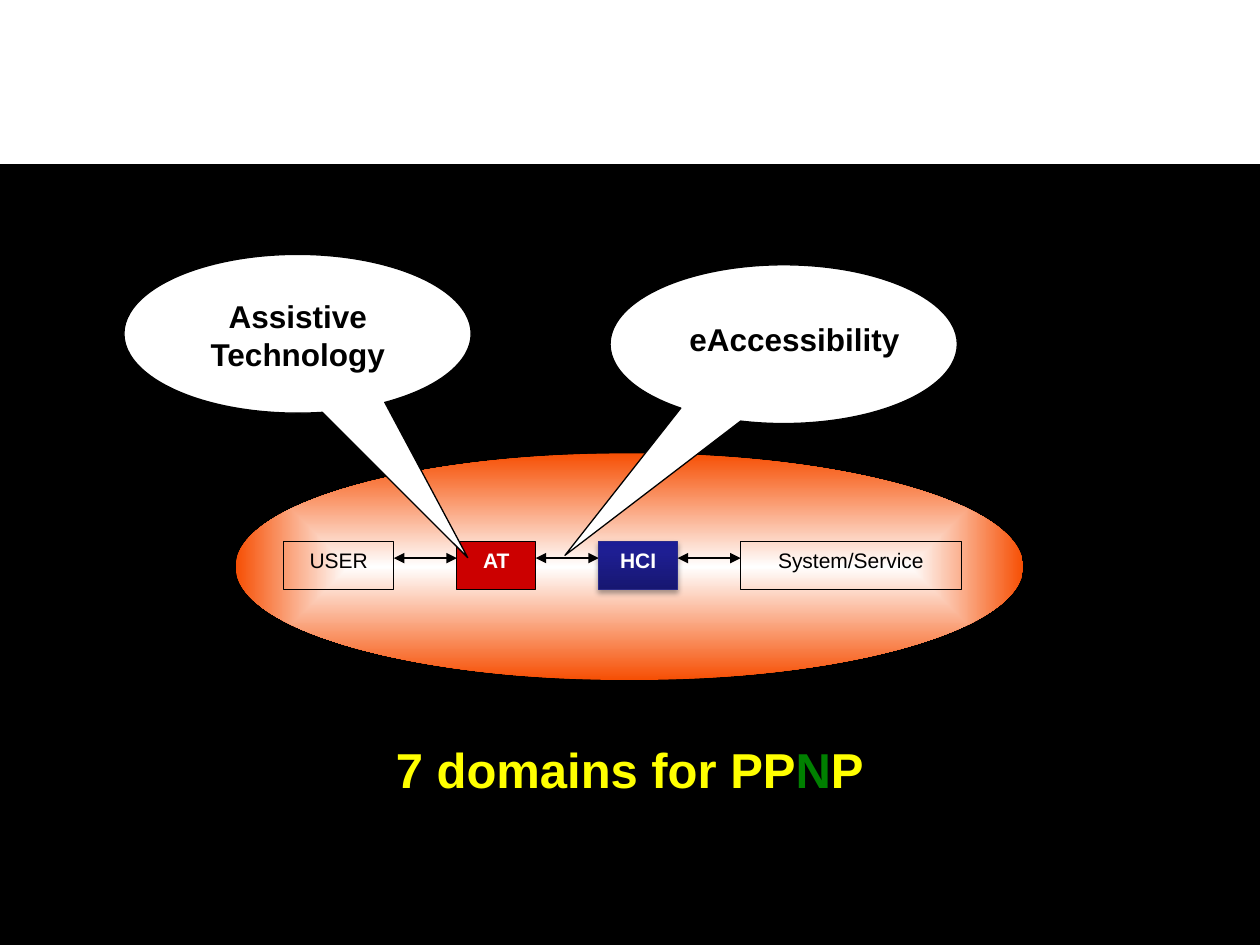
from pptx import Presentation
from pptx.dml.color import RGBColor
from pptx.enum.shapes import MSO_CONNECTOR, MSO_SHAPE
from pptx.enum.text import MSO_ANCHOR, PP_ALIGN
from pptx.oxml import parse_xml
from pptx.oxml.ns import nsdecls, qn
from pptx.util import Cm, Pt
from lxml import etree

RECTANGLE, ELLIPSE = MSO_SHAPE.RECTANGLE, MSO_SHAPE.OVAL
CALLOUT = MSO_SHAPE.OVAL_CALLOUT
STRAIGHT = MSO_CONNECTOR.STRAIGHT
CENTER, TOP, MIDDLE = PP_ALIGN.CENTER, MSO_ANCHOR.TOP, MSO_ANCHOR.MIDDLE

BLACK = RGBColor(0x00, 0x00, 0x00)
WHITE = RGBColor(0xFF, 0xFF, 0xFF)
RED = RGBColor(0xCC, 0x00, 0x00)
YELLOW = RGBColor(0xFF, 0xFF, 0x00)
GREEN = RGBColor(0x00, 0x80, 0x00)
ORANGE = RGBColor(0xF6, 0x4F, 0x04)
NAVY_DARK = RGBColor(0x17, 0x17, 0x71)
NAVY = RGBColor(0x1E, 0x1E, 0x93)
NAVY_END = RGBColor(0x1C, 0x1C, 0x96)
NAVY_LINE = RGBColor(0x2A, 0x2A, 0x89)

FROM_CENTRE = ('<a:path path="shape"><a:fillToRect l="50000" t="50000" '
               'r="50000" b="50000"/></a:path>')
UPWARD = '<a:lin ang="16200000" scaled="0"/>'


class SlideBuilder:
    font = "Arial"
    line_width = Pt(0.75)

    def __init__(self, slide):
        self.slide = slide

    def shape(self, kind, left, top, width, height, fill=None, line=BLACK):
        shape = self.slide.shapes.add_shape(
            kind, Cm(left), Cm(top), Cm(width), Cm(height))
        shape.shadow.inherit = False
        if fill is None:
            shape.fill.background()
        else:
            shape.fill.solid()
            shape.fill.fore_color.rgb = fill
        if line is None:
            shape.line.fill.background()
        else:
            shape.line.color.rgb = line
            shape.line.width = self.line_width
        return shape

    def gradient(self, shape, stops, direction):
        """Fill with (percent, colour) stops along an a:lin or a:path element."""
        shape.fill.gradient()
        properties = shape._element.spPr
        stop_xml = "".join(
            f'<a:gs pos="{percent * 1000}"><a:srgbClr val="{color}"/></a:gs>'
            for percent, color in stops)
        properties.replace(properties.find(qn("a:gradFill")), parse_xml(
            f'<a:gradFill {nsdecls("a")} rotWithShape="1">'
            f'<a:gsLst>{stop_xml}</a:gsLst>{direction}</a:gradFill>'))

    def drop_shadow(self, shape):
        shape._element.spPr.find(qn("a:effectLst")).append(parse_xml(
            f'<a:outerShdw {nsdecls("a")} blurRad="{Pt(3.1)}" dist="{Pt(1.8)}" '
            'dir="5400000" rotWithShape="0"><a:srgbClr val="000000">'
            '<a:alpha val="35000"/></a:srgbClr></a:outerShdw>'))

    def callout(self, left, top, tip):
        """Draw a speech balloon whose tip is given relative to its size."""
        balloon = self.shape(CALLOUT, left, top, 7, 3.2, WHITE)
        for index, offset in enumerate(tip):
            balloon.adjustments[index] = offset

    def label(self, shape, runs, size, bold=False, anchor=TOP):
        """Put centred (text, colour) runs into a shape."""
        frame = shape.text_frame
        frame.word_wrap = True
        frame.vertical_anchor = anchor
        paragraph = frame.paragraphs[0]
        paragraph.alignment = CENTER
        paragraph.font.name = self.font
        paragraph.font.size = Pt(size)
        paragraph.font.bold = bold
        for text, color in runs:
            run = paragraph.add_run()
            run.text = text
            run.font.color.rgb = color

    def text(self, left, top, width, height, runs, size, anchor=TOP):
        box = self.slide.shapes.add_textbox(
            Cm(left), Cm(top), Cm(width), Cm(height))
        self.label(box, runs, size, True, anchor)

    def double_arrow(self, start, end, y):
        arrow = self.slide.shapes.add_connector(
            STRAIGHT, Cm(start), Cm(y), Cm(end), Cm(y))
        arrow.line.color.rgb = BLACK
        arrow.line.width = self.line_width
        line = arrow._element.spPr.find(qn("a:ln"))
        for end_tag in ("a:headEnd", "a:tailEnd"):
            etree.SubElement(line, qn(end_tag), type="triangle")
        etree.SubElement(arrow._element.spPr, qn("a:effectLst"))


def main():
    presentation = Presentation()
    presentation.slide_width, presentation.slide_height = Cm(25.4), Cm(19.05)
    slide = presentation.slides.add_slide(presentation.slide_layouts[6])
    slide.background.fill.solid()
    slide.background.fill.fore_color.rgb = BLACK
    builder = SlideBuilder(slide)

    builder.shape(RECTANGLE, -0.51, -0.28, 26.42, 3.61, WHITE)
    environment = builder.shape(ELLIPSE, 4.75, 9.14, 15.88, 4.57, line=None)
    builder.gradient(environment, [(0, WHITE), (100, ORANGE)], FROM_CENTRE)

    chain = [
        ("USER", 2.22, None, BLACK),
        ("AT", 1.59, RED, WHITE),
        ("HCI", 1.59, NAVY, WHITE),
        ("System/Service", 4.45, None, BLACK),
    ]
    left, gap = 5.72, 1.27
    for index, (name, width, fill, color) in enumerate(chain):
        if index:
            builder.double_arrow(left - gap, left, 11.25)
        link = builder.shape(RECTANGLE, left, 10.92, width, 0.96, fill)
        builder.label(link, [(name, color)], 12, bold=fill is not None)
        if name == "HCI":
            builder.gradient(
                link, [(0, NAVY_DARK), (80, NAVY), (100, NAVY_END)], UPWARD)
            link.line.color.rgb = NAVY_LINE
            builder.drop_shadow(link)
        left += width + gap

    builder.callout(12.3, 5.34, (-0.63, 1.33))
    builder.text(13.31, 6.32, 5.41, 1.02, [("eAccessibility", BLACK)], 18)
    builder.callout(2.5, 5.13, (0.49, 1.41))
    builder.text(3.3, 5.87, 5.41, 1.8, [("Assistive Technology", BLACK)], 18)

    builder.text(1.9, 13.92, 21.59, 3.18,
                 [("7 domains for PP", YELLOW), ("N", GREEN), ("P", YELLOW)],
                 28, MIDDLE)
    presentation.save("out.pptx")


if __name__ == "__main__":
    main()
